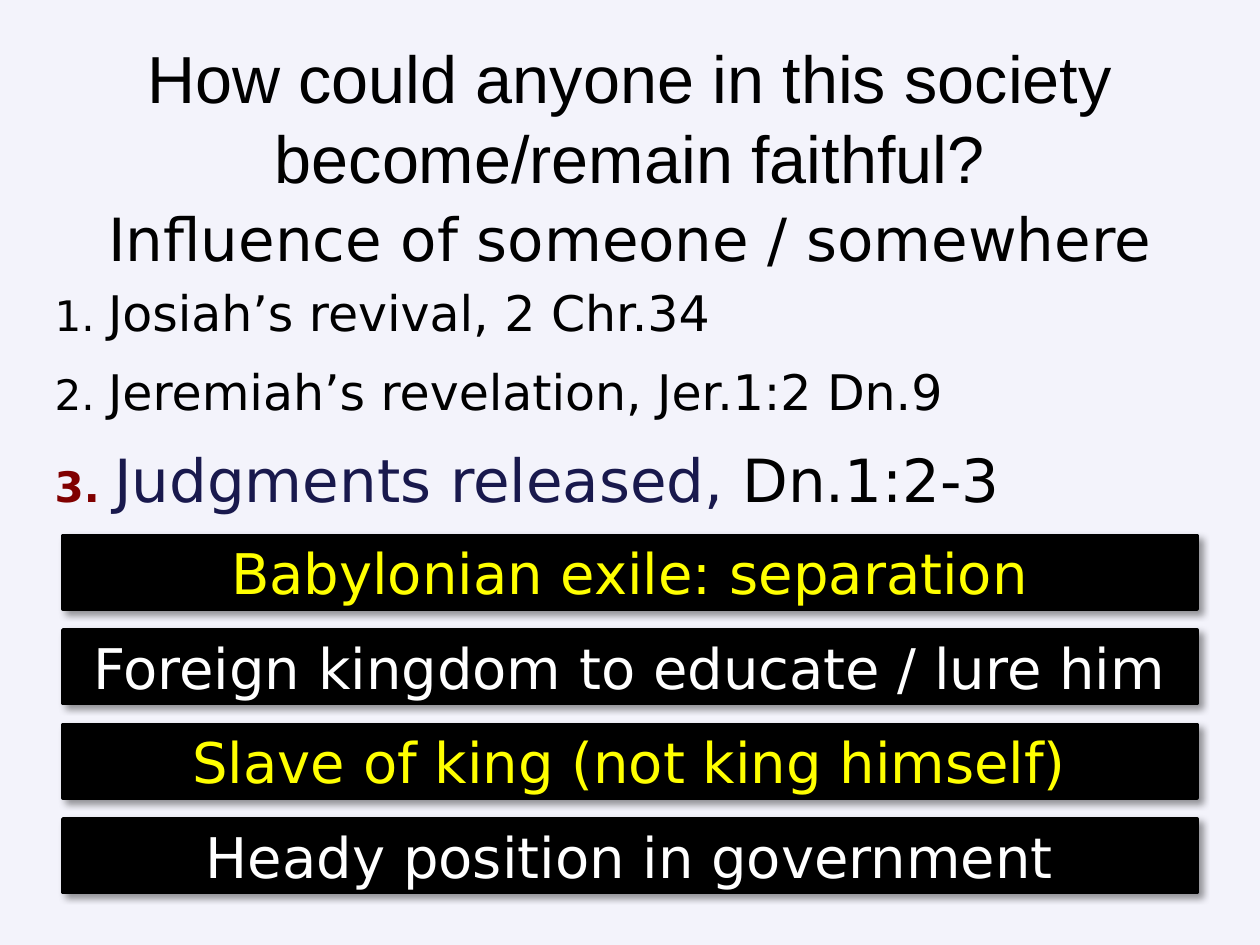
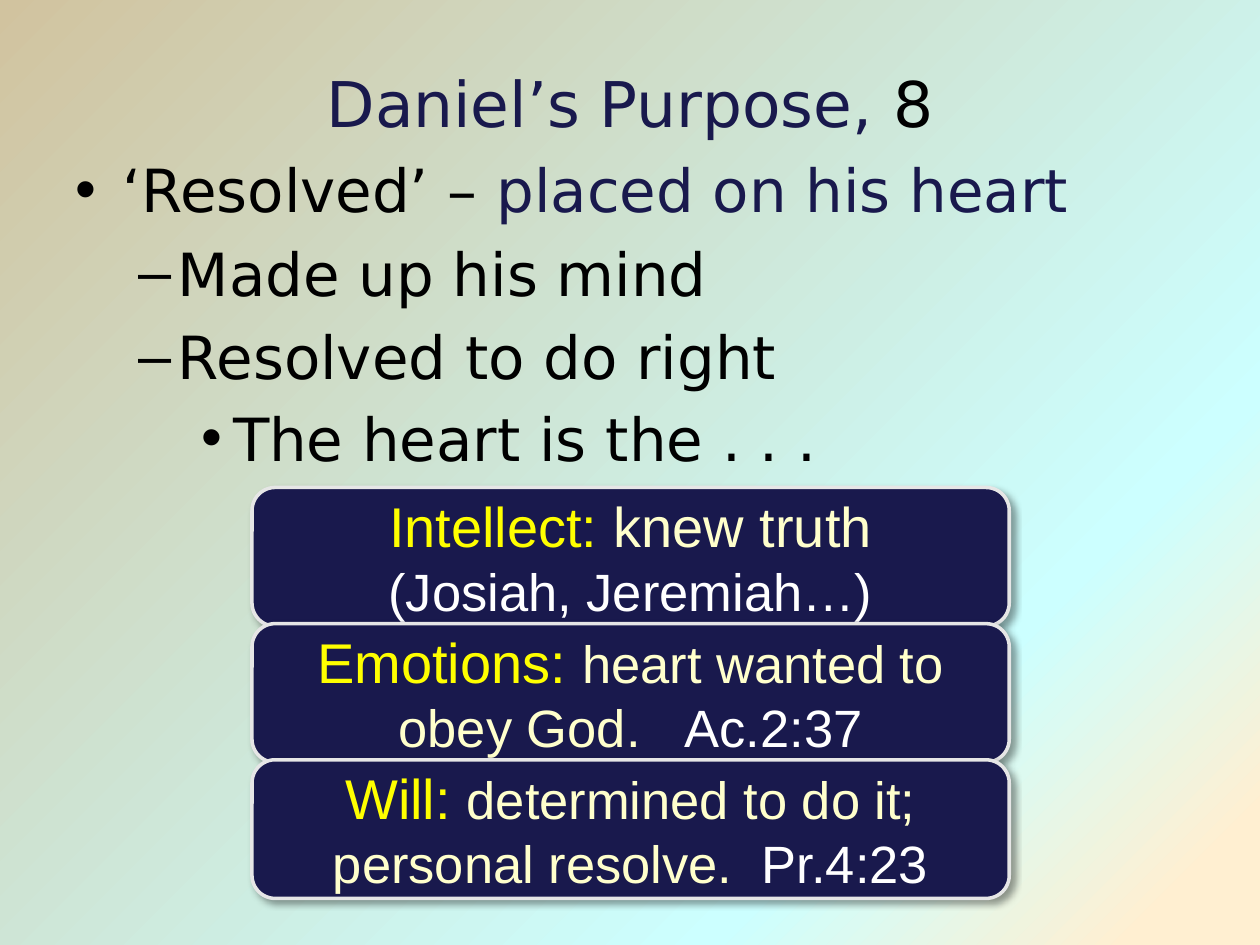
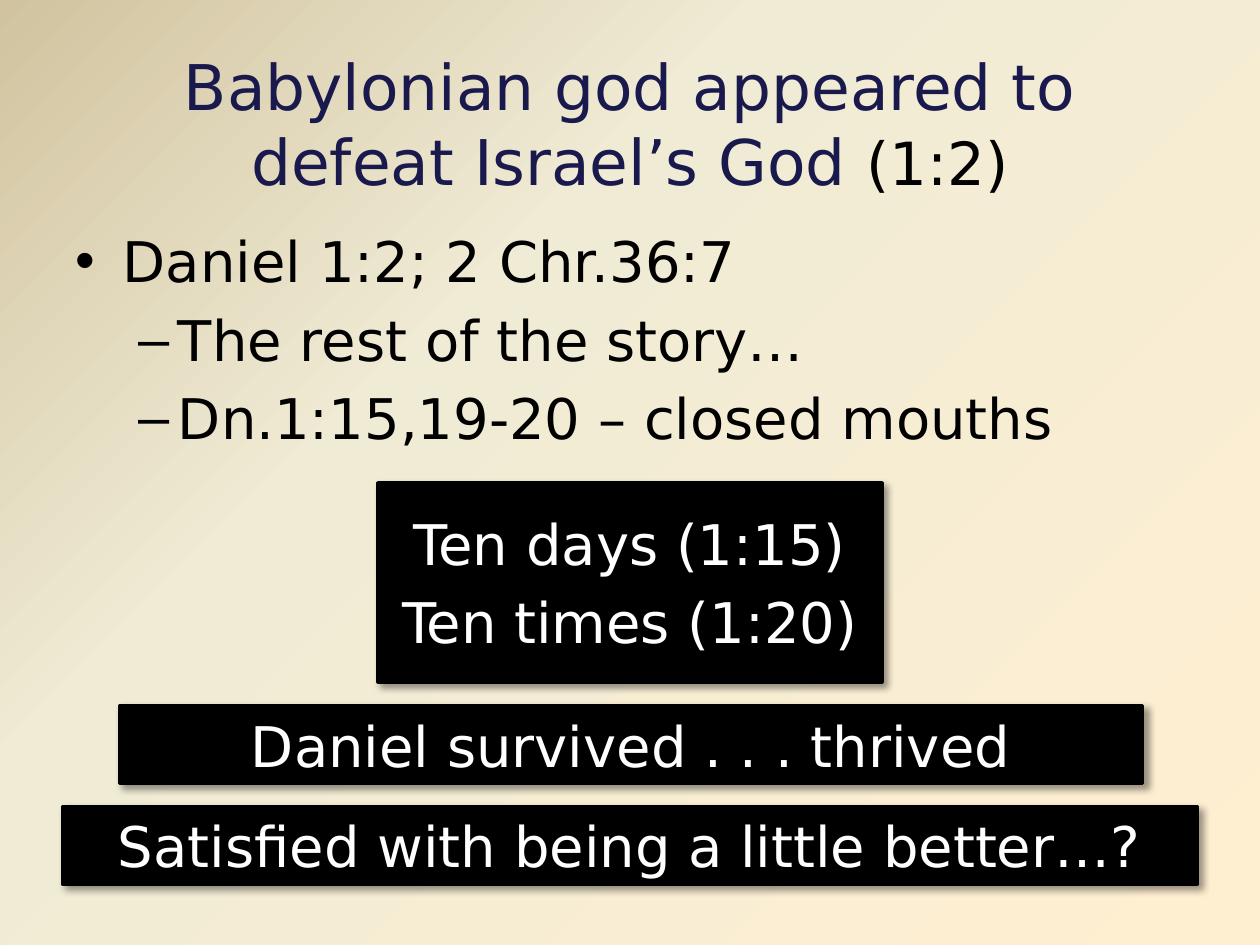
import pptx
import pptx.util
import pptx.dml.color
import pptx.enum.shapes
import pptx.enum.text
import pptx.oxml
import pptx.oxml.ns

Pt = pptx.util.Pt
RGBColor = pptx.dml.color.RGBColor
CENTER = pptx.enum.text.PP_ALIGN.CENTER
RECT = pptx.enum.shapes.MSO_SHAPE.RECTANGLE
ROUNDED = pptx.enum.shapes.MSO_SHAPE.ROUNDED_RECTANGLE

BLACK = RGBColor(0x00, 0x00, 0x00)
WHITE = RGBColor(0xFF, 0xFF, 0xFF)
NAVY = RGBColor(0x19, 0x19, 0x4D)
MAROON = RGBColor(0x80, 0x00, 0x00)
YELLOW = RGBColor(0xFF, 0xFF, 0x00)
CREAM = RGBColor(0xFF, 0xFF, 0xCC)
SILVER = RGBColor(0xE6, 0xE6, 0xE6)
LAVENDER = RGBColor(0xF3, 0xF3, 0xFB)
TAN = RGBColor(0xD1, 0xC3, 0x9F)
AQUA = RGBColor(0xCC, 0xFF, 0xFF)
IVORY = RGBColor(0xF0, 0xEB, 0xD5)
PEACH = RGBColor(0xFF, 0xEF, 0xD1)

SANS = "DejaVu Sans"
ARIAL = "Arial"
NS = pptx.oxml.ns.nsdecls("a")
SHADOW = (
    f'<a:effectLst {NS}><a:outerShdw blurRad="{Pt(4)}" dist="{Pt(3)}" dir="2700000" algn="tl" rotWithShape="0">'
    '<a:srgbClr val="000000"><a:alpha val="40000"/></a:srgbClr></a:outerShdw></a:effectLst>'
)


def write(sp, paragraphs, font=SANS):
    tf = sp.text_frame
    tf.word_wrap = True
    tf.auto_size = pptx.enum.text.MSO_AUTO_SIZE.NONE
    for i, (fmt, runs) in enumerate(paragraphs):
        p = tf.paragraphs[0] if i == 0 else tf.add_paragraph()
        for name, value in fmt.items():
            setattr(p, name, value)
        for text, size, color, *bold in runs:
            r = p.add_run()
            r.text = text.rstrip("\n")
            for name, value in {"name": font, "size": Pt(size), "bold": bool(bold)}.items():
                setattr(r.font, name, value)
            r.font.color.rgb = color
            if text.endswith("\n"):
                p.add_line_break()


def add_box(s, kind, at, fill, line, paragraphs, font=SANS):
    sp = s.shapes.add_shape(kind, *map(Pt, at))
    sp.fill.solid()
    sp.fill.fore_color.rgb = fill
    sp.line.color.rgb = line
    sp.line.width = Pt(2)
    sp.element.spPr.append(pptx.oxml.parse_xml(SHADOW))
    write(sp, [({"alignment": CENTER, **fmt}, runs) for fmt, runs in paragraphs], font)


prs = pptx.Presentation()
prs.slide_width, prs.slide_height = Pt(720), Pt(540)

after = {"space_after": Pt(6)}
slides = [
    {
        "stops": [],
        "title": ((36, 21.6, 648, 90), ARIAL,
                  [("How could anyone in this society become/remain faithful?", 38, BLACK)]),
        "body": ((24, 111.6, 672, 380), [
            ({"alignment": CENTER}, [("Influence of someone / somewhere", 34, BLACK)]),
            (after, [("1. ", 24, BLACK), ("Josiah’s revival, 2 Chr.34", 28, BLACK)]),
            (after, [("2. ", 24, BLACK), ("Jeremiah’s revelation, Jer.1:2 Dn.9", 28, BLACK)]),
            (after, [("3. ", 24, MAROON, True), ("Judgments released, ", 34, NAVY), ("Dn.1:2-3", 34, BLACK)]),
        ]),
    },
    {
        "stops": [(0, TAN), (75, AQUA), (94, PEACH)],
        "title": ((36, 21.6, 648, 74), SANS, [("Daniel’s Purpose, ", 36, NAVY), ("8", 36, BLACK)]),
        "body": ((36, 84, 648, 420), [
            ({}, [("‘Resolved’ – ", 34, BLACK), ("placed on his heart", 34, NAVY)]),
            ({"level": 1}, [("Made up his mind", 34, BLACK)]),
            ({"level": 1}, [("Resolved to do right", 34, BLACK)]),
            ({"level": 2, "space_before": Pt(6)}, [("The heart is the . . .", 34, BLACK)]),
        ]),
    },
    {
        "stops": [(0, TAN), (35, IVORY), (100, PEACH)],
        "title": ((36, 18, 648, 104.4), SANS,
                  [("Babylonian god appeared to defeat Israel’s God ", 36, NAVY), ("(1:2)", 34, BLACK)]),
        "body": ((36, 126, 648, 372), [
            ({}, [("Daniel 1:2; 2 Chr.36:7", 32, BLACK)]),
            ({"level": 1}, [("The rest of the story…", 32, BLACK)]),
            ({"level": 1}, [("Dn.1:15,19-20 – closed mouths", 32, BLACK)]),
        ]),
    },
]

for content in slides:
    s = prs.slides.add_slide(prs.slide_layouts[1])
    fill = s.background.fill
    if content["stops"]:
        fill.gradient()
        fill.gradient_angle = 315
        gs_lst = next(s.element.iter(pptx.oxml.ns.qn("a:gsLst")))
        for gs in list(gs_lst):
            gs_lst.remove(gs)
        for pos, color in content["stops"]:
            gs_lst.append(pptx.oxml.parse_xml(
                f'<a:gs {NS} pos="{pos * 1000}"><a:srgbClr val="{color}"/></a:gs>'))
    else:
        fill.solid()
        fill.fore_color.rgb = LAVENDER
    title, body = s.shapes.title, s.placeholders[1]
    title_at, title_font, title_runs = content["title"]
    body_at, body_paragraphs = content["body"]
    for sp, at in ((title, title_at), (body, body_at)):
        sp.left, sp.top, sp.width, sp.height = map(Pt, at)
    write(title, [({}, title_runs)], title_font)
    write(body, body_paragraphs)

influence, purpose, defeat = prs.slides

for p in influence.placeholders[1].text_frame.paragraphs:
    pPr = p._p.get_or_add_pPr()
    pPr.set("marL", "0")
    pPr.set("indent", "0")
    pPr.append(pptx.oxml.parse_xml(f"<a:buNone {NS}/>"))

bands = [
    ("Babylonian exile: separation", YELLOW),
    ("Foreign kingdom to educate / lure him", WHITE),
    ("Slave of king (not king himself)", YELLOW),
    ("Heady position in government", WHITE),
]
for i, (text, color) in enumerate(bands):
    add_box(influence, RECT, (36, 306 + 54 * i, 648, 42), BLACK, BLACK, [({}, [(text, 32, color)])])

heart_parts = [
    [("Intellect: ", 32, YELLOW), ("knew truth\n", 32, CREAM), ("(Josiah, Jeremiah…)", 30, WHITE)],
    [("Emotions: ", 32, YELLOW), ("heart wanted to obey God.   ", 30, CREAM), ("Ac.2:37", 30, WHITE)],
    [("Will: ", 32, YELLOW), ("determined to do it; personal resolve.  ", 30, CREAM), ("Pr.4:23", 30, WHITE)],
]
for i, runs in enumerate(heart_parts):
    add_box(purpose, ROUNDED, (144, 278.6 + 77.8 * i, 432.7, 79.2), NAVY, SILVER, [({}, runs)], ARIAL)

outcomes = [
    ((216, 275.8, 288, 113.8), [(after, "Ten days (1:15)"), ({}, "Ten times (1:20)")]),
    ((68.4, 403.2, 584.6, 44.6), [(after, "Daniel survived . . . thrived")]),
    ((36, 460.8, 648, 44.6), [(after, "Satisfied with being a little better…?")]),
]
for at, lines in outcomes:
    add_box(defeat, RECT, at, BLACK, BLACK, [(fmt, [(text, 32, WHITE)]) for fmt, text in lines])

prs.save("out.pptx")
